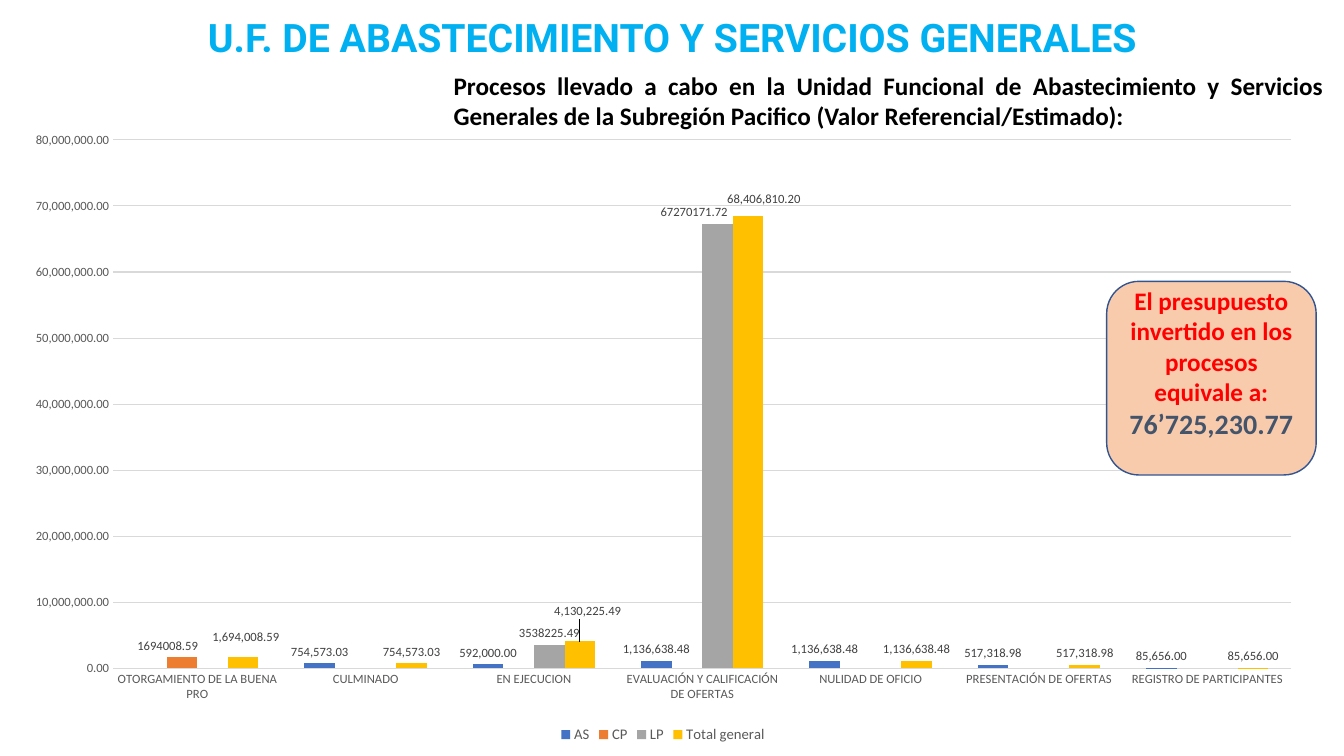
import pptx
import pptx.chart.data
import pptx.dml.color
import pptx.enum.chart
import pptx.enum.shapes
import pptx.enum.text
import pptx.oxml
import pptx.oxml.ns
import pptx.util
from pptx.util import Cm

RGBColor = pptx.dml.color.RGBColor
PP_ALIGN = pptx.enum.text.PP_ALIGN

BLACK = RGBColor(0x00, 0x00, 0x00)
SKY = RGBColor(0x00, 0xB0, 0xF0)
RED = RGBColor(0xFF, 0x00, 0x00)
SLATE = RGBColor(0x44, 0x54, 0x6A)
PEACH = RGBColor(0xF8, 0xCB, 0xAD)
NAVY = RGBColor(0x32, 0x54, 0x91)
GRID_GRAY = RGBColor(0xD9, 0xD9, 0xD9)
AXIS_GRAY = RGBColor(0x59, 0x59, 0x59)
LABEL_GRAY = RGBColor(0x40, 0x40, 0x40)
AS_BLUE = RGBColor(0x44, 0x72, 0xC4)
CP_ORANGE = RGBColor(0xED, 0x7D, 0x31)
LP_GRAY = RGBColor(0xA5, 0xA5, 0xA5)
TOTAL_YELLOW = RGBColor(0xFF, 0xC0, 0x00)

MONEY = "#,##0.00"
STAGES = [
    "OTORGAMIENTO DE LA BUENA PRO",
    "CULMINADO",
    "EN EJECUCION",
    "EVALUACIÓN Y CALIFICACIÓN DE OFERTAS",
    "NULIDAD DE OFICIO",
    "PRESENTACIÓN DE OFERTAS",
    "REGISTRO DE PARTICIPANTES",
]
# name, number format, colour, amounts, label shifts by stage
PROCESSES = [
    ("AS", MONEY, AS_BLUE,
     [None, 754573.03, 592000, 1136638.48, 1136638.48, 517318.98, 85656], {}),
    ("CP", "General", CP_ORANGE,
     [1694008.59] + [None] * 6, {0: (-0.011, 0)}),
    ("LP", "General", LP_GRAY,
     [None, None, 3538225.49, 67270171.72, None, None, None], {3: (-0.018, 0)}),
    ("Total general", MONEY, TOTAL_YELLOW,
     [1694008.59, 754573.03, 4130225.49, 68406810.2, 1136638.48, 517318.98, 85656],
     {0: (0.002, -0.013), 2: (0.006, -0.029), 3: (0.012, -0.01)}),
]


class SlideBuilder:
    def __init__(self, slide, face="Calibri"):
        self.slide = slide
        self.face = face

    def style(self, font, size, color, bold=False, face=None):
        font.name = face or self.face
        font.size = pptx.util.Pt(size)
        font.color.rgb = color
        font.bold = bold

    def text(self, box, wording, size, color, align, face=None):
        frame = self.slide.shapes.add_textbox(*map(Cm, box)).text_frame
        frame.word_wrap = True
        frame.text = wording
        frame.paragraphs[0].alignment = align
        self.style(frame.paragraphs[0].runs[0].font, size, color, True, face)

    def callout(self, box, message, amount):
        card = self.slide.shapes.add_shape(
            pptx.enum.shapes.MSO_SHAPE.ROUNDED_RECTANGLE, *map(Cm, box))
        card.shadow.inherit = False
        card.fill.solid()
        card.fill.fore_color.rgb = PEACH
        card.line.color.rgb = NAVY
        card.line.width = pptx.util.Pt(1)
        frame = card.text_frame
        frame.word_wrap = True
        frame.vertical_anchor = pptx.enum.text.MSO_ANCHOR.MIDDLE
        frame.margin_bottom = Cm(0.9)
        paragraph = frame.paragraphs[0]
        paragraph.text = message
        paragraph.alignment = PP_ALIGN.CENTER
        self.style(paragraph.runs[0].font, 18, RED, True)
        total = paragraph.add_run()
        total.text = amount
        self.style(total.font, 20, SLATE, True)

    def layout(self, **parts):
        children = "".join(f'<c:{tag} val="{value}"/>' for tag, value in parts.items())
        return pptx.oxml.parse_xml(
            f'<c:layout {pptx.oxml.ns.nsdecls("c")}><c:manualLayout>'
            f'{children}</c:manualLayout></c:layout>')

    def shift_label(self, series, stage, shift, number_format):
        label = series.points[stage].data_label
        self.style(label.font, 9, LABEL_GRAY)
        label.position = pptx.enum.chart.XL_LABEL_POSITION.OUTSIDE_END
        index = series._element.xpath(f'c:dLbls/c:dLbl/c:idx[@val="{stage}"]')[0]
        index.addnext(pptx.oxml.parse_xml(
            f'<c:numFmt {pptx.oxml.ns.nsdecls("c")} '
            f'formatCode="{number_format}" sourceLinked="0"/>'))
        index.addnext(self.layout(x=shift[0], y=shift[1]))

    def hide_leader_lines(self, series):
        series._element.xpath("c:dLbls")[0].append(pptx.oxml.parse_xml(
            f'<c:extLst {pptx.oxml.ns.nsdecls("c")}>'
            '<c:ext uri="{CE6537A1-D6FC-4f65-9D91-7224C49458BB}" '
            'xmlns:c15="http://schemas.microsoft.com/office/drawing/2012/chart">'
            '<c15:showLeaderLines val="0"/></c:ext></c:extLst>'))

    def axis(self, axis):
        axis.major_tick_mark = pptx.enum.chart.XL_TICK_MARK.NONE
        axis.minor_tick_mark = pptx.enum.chart.XL_TICK_MARK.NONE
        axis.format.line.fill.background()
        self.style(axis.tick_labels.font, 9, AXIS_GRAY)

    def column_chart(self, box, stages, processes):
        data = pptx.chart.data.CategoryChartData()
        data.categories = stages
        for name, number_format, _, amounts, _ in processes:
            data.add_series(name, amounts, number_format)
        chart = self.slide.shapes.add_chart(
            pptx.enum.chart.XL_CHART_TYPE.COLUMN_CLUSTERED, *map(Cm, box), data).chart
        self.style(chart.font, 10, BLACK)
        chart.has_title = False
        chart.has_legend = True
        chart.legend.position = pptx.enum.chart.XL_LEGEND_POSITION.BOTTOM
        chart.legend.include_in_layout = False
        self.style(chart.legend.font, 10.5, AXIS_GRAY)

        self.axis(chart.category_axis)
        amount_axis = chart.value_axis
        self.axis(amount_axis)
        amount_axis.minimum_scale = 0
        amount_axis.maximum_scale = 80000000
        amount_axis.major_unit = 10000000
        amount_axis.tick_labels.number_format = MONEY
        amount_axis.tick_labels.number_format_is_linked = False
        amount_axis.has_major_gridlines = True
        amount_axis.major_gridlines.format.line.color.rgb = GRID_GRAY
        amount_axis.major_gridlines.format.line.width = pptx.util.Pt(0.75)

        plot = chart.plots[0]
        plot.gap_width = 150
        plot.overlap = 0
        plot.vary_by_categories = False
        for series, (_, number_format, color, _, shifts) in zip(plot.series, processes):
            series.format.fill.solid()
            series.format.fill.fore_color.rgb = color
            series.invert_if_negative = False
            labels = series.data_labels
            labels.show_value = True
            labels.number_format = number_format
            labels.number_format_is_linked = False
            labels.position = pptx.enum.chart.XL_LABEL_POSITION.OUTSIDE_END
            self.style(labels.font, 9, LABEL_GRAY)
            for stage, shift in shifts.items():
                self.shift_label(series, stage, shift, number_format)
            self.hide_leader_lines(series)

        plot_area = chart._chartSpace.chart.plotArea
        for automatic in plot_area.xpath("c:layout"):
            plot_area.remove(automatic)
        plot_area.insert(0, self.layout(
            layoutTarget="inner", xMode="edge", yMode="edge",
            x=0.079, y=0.032, w=0.902, h=0.842))


def main():
    presentation = pptx.Presentation()
    presentation.slide_width = Cm(33.87)
    presentation.slide_height = Cm(19.05)
    builder = SlideBuilder(presentation.slides.add_slide(presentation.slide_layouts[6]))

    builder.text((2.64, 0.2, 28.6, 1.45), "U.F. DE ABASTECIMIENTO Y SERVICIOS GENERALES",
                 28, SKY, PP_ALIGN.CENTER, "Roboto")
    builder.column_chart((0.25, 3.02, 32.92, 15.82), STAGES, PROCESSES)
    builder.callout((27.89, 7.09, 5.28, 4.88),
                    "El presupuesto invertido en los procesos equivale a: ", "76’725,230.77")
    builder.text((11.18, 1.65, 22.43, 1.8),
                 "Procesos llevado a cabo en la Unidad Funcional de Abastecimiento y Servicios "
                 "Generales de la Subregión Pacifico (Valor Referencial/Estimado):",
                 18, BLACK, PP_ALIGN.JUSTIFY)
    presentation.save("out.pptx")


if __name__ == "__main__":
    main()
